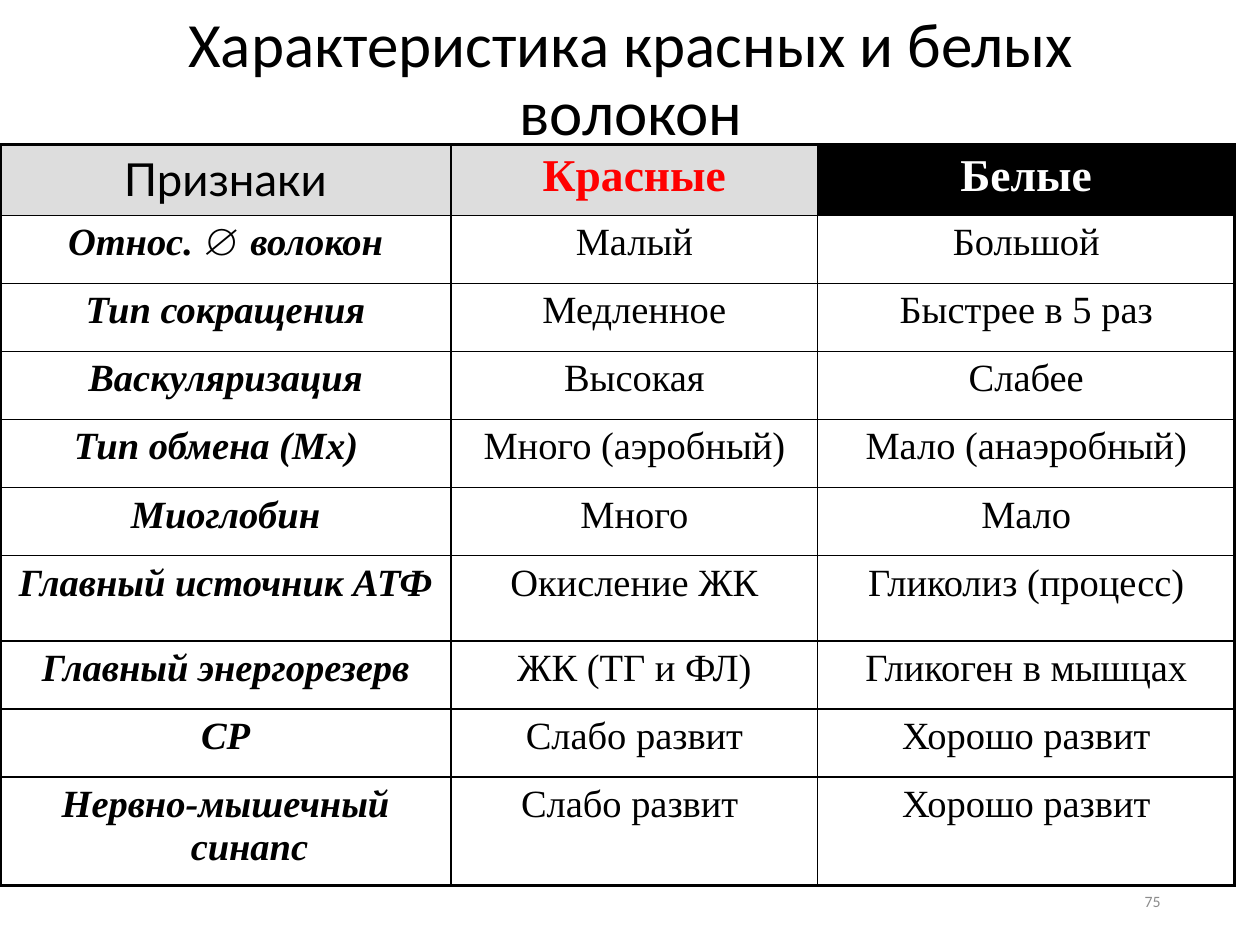
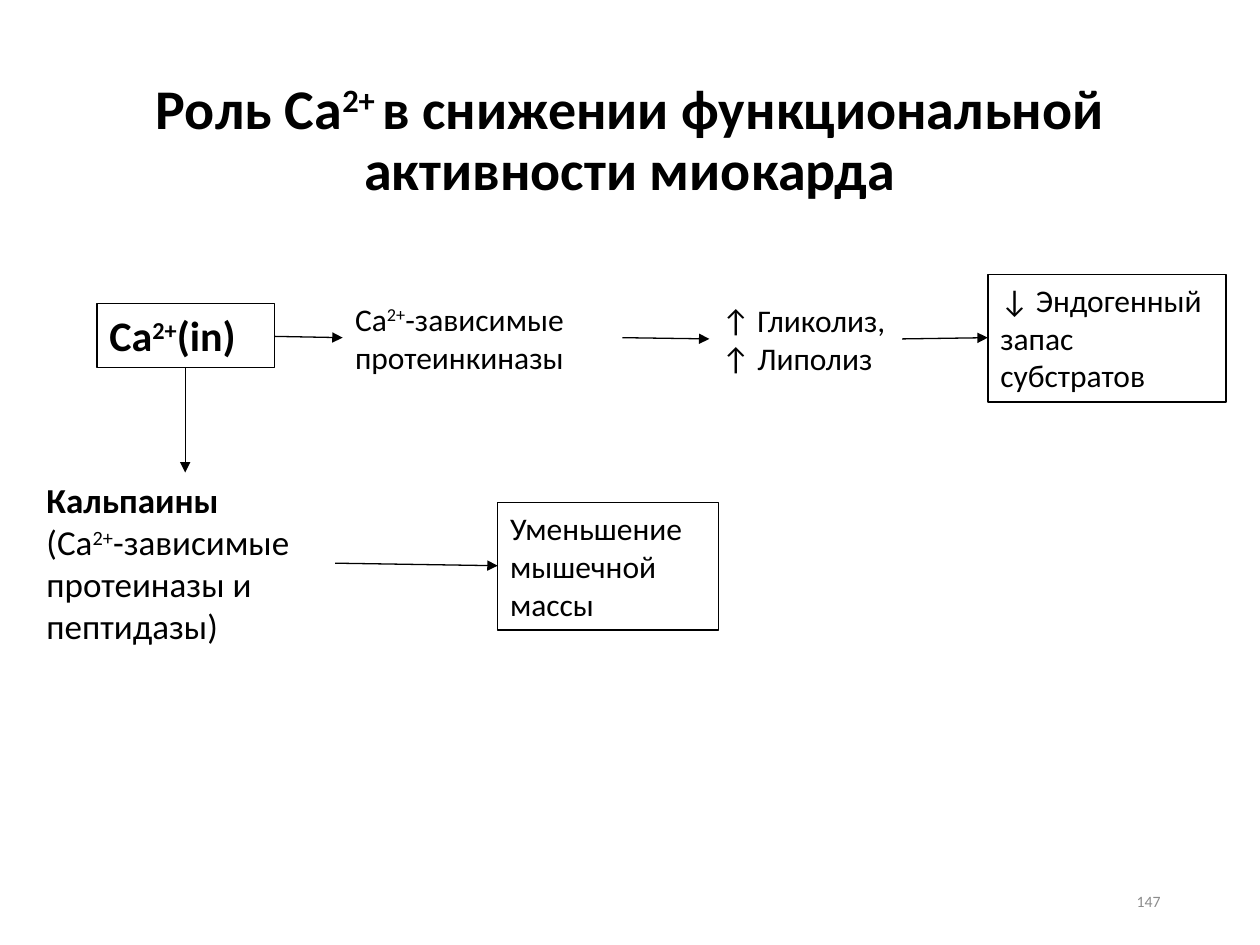
import pptx
import pptx.util
import pptx.dml.color
import pptx.enum.shapes
import pptx.enum.text
import pptx.oxml.ns
from lxml import etree

Inches = pptx.util.Inches
Pt = pptx.util.Pt
RGBColor = pptx.dml.color.RGBColor
ALIGN = pptx.enum.text.PP_ALIGN
ANCHOR = pptx.enum.text.MSO_ANCHOR
qn = pptx.oxml.ns.qn

BLACK = RGBColor(0x00, 0x00, 0x00)
WHITE = RGBColor(0xFF, 0xFF, 0xFF)
RED = RGBColor(0xFF, 0x00, 0x00)
HEADER_GREY = RGBColor(0xDD, 0xDD, 0xDD)
NUMBER_GREY = RGBColor(0x8C, 0x8C, 0x8C)
ION = "2+"  # charge, always set as superscript


def add_run(paragraph, text, size, color=BLACK, font="Calibri", bold=False, italic=False):
    run = paragraph.add_run()
    run.text = text
    run.font.size = Pt(size)
    run.font.name = font
    run.font.color.rgb = color
    run.font.bold = bold
    run.font.italic = italic
    if text.strip() == ION:
        run.font._element.set("baseline", "30000")


def add_text(slide, place, lines, size, color=BLACK, align=ALIGN.LEFT, anchor=ANCHOR.TOP,
             spacing=None, framed=False, wrap=True, grow=False):
    """Each line is a pair: bold or not, and the list of its run texts."""
    place = [Inches(length) for length in place]
    if framed:
        box = slide.shapes.add_shape(pptx.enum.shapes.MSO_SHAPE.RECTANGLE, *place)
        box.shadow.inherit = False
        box.fill.background()
        box.line.color.rgb = BLACK
        box.line.width = Pt(0.75)
    else:
        box = slide.shapes.add_textbox(*place)
    frame = box.text_frame
    frame.word_wrap = wrap
    frame.vertical_anchor = anchor
    frame.auto_size = (pptx.enum.text.MSO_AUTO_SIZE.SHAPE_TO_FIT_TEXT if grow
                       else pptx.enum.text.MSO_AUTO_SIZE.NONE)
    for index, (bold, texts) in enumerate(lines):
        paragraph = frame.add_paragraph() if index else frame.paragraphs[0]
        paragraph.alignment = align
        if spacing:
            paragraph.line_spacing = spacing
        for text in texts:
            add_run(paragraph, text, size, color, bold=bold)


presentation = pptx.Presentation()
presentation.slide_width = Inches(10)
presentation.slide_height = Inches(7.5)

# Titles and slide numbers
headings = [
    ((0.51, 0.21, 9, 0.87), 36, False, ["Характеристика красных и белых волокон"], "75"),
    ((0.69, 0.4, 8.62, 1.45), 32, True,
     ["Роль Ca", ION + " ", "в снижении функциональной активности миокарда"], "147"),
]
slides = []
for place, size, bold, texts, number in headings:
    slide = presentation.slides.add_slide(presentation.slide_layouts[6])
    add_text(slide, place, [(bold, texts)], size,
             align=ALIGN.CENTER, anchor=ANCHOR.MIDDLE, spacing=0.9)
    add_text(slide, (7.06, 6.95, 2.25, 0.4), [(False, [number])], 9, NUMBER_GREY,
             align=ALIGN.RIGHT, anchor=ANCHOR.MIDDLE)
    slides.append(slide)
fibres_slide, calcium_slide = slides

# Slide 1: comparison of fibres
fibre_rows = [
    ("Признаки", "Красные", "Белые"),
    ("Относ. ∅ волокон", "Малый", "Большой"),
    ("Тип сокращения", "Медленное", "Быстрее в 5 раз"),
    ("Васкуляризация", "Высокая", "Слабее"),
    ("Тип обмена (Мх)", "Много (аэробный)", "Мало (анаэробный)"),
    ("Миоглобин", "Много", "Мало"),
    ("Главный источник АТФ", "Окисление ЖК", "Гликолиз (процесс)"),
    ("Главный энергорезерв", "ЖК (ТГ и ФЛ)", "Гликоген в мышцах"),
    ("СР", "Слабо развит", "Хорошо развит"),
    ("Нервно-мышечный синапс", "Слабо развит ", "Хорошо развит"),
]
column_widths = [3.58, 2.91, 3.31]
row_heights = [0.56] + [0.54] * 5 + [0.68] + [0.54] * 2 + [0.86]
header_styles = [  # fill, text colour, font, bold
    (HEADER_GREY, BLACK, "Lato", False),
    (HEADER_GREY, RED, "Times New Roman", True),
    (BLACK, WHITE, "Times New Roman", True),
]
last_row, last_column = len(fibre_rows) - 1, len(column_widths) - 1

fibres = fibres_slide.shapes.add_table(
    len(fibre_rows), len(column_widths), Inches(0), Inches(1.15),
    Inches(sum(column_widths)), Inches(sum(row_heights))).table
fibres.first_row = fibres.horz_banding = False
for column, width in zip(fibres.columns, column_widths):
    column.width = Inches(width)
for row, height in zip(fibres.rows, row_heights):
    row.height = Inches(height)

for r, row_texts in enumerate(fibre_rows):
    for c, text in enumerate(row_texts):
        cell = fibres.cell(r, c)
        # Outer edges are twice as thick as inner ones
        outer_edges = {"lnL": c == 0, "lnR": c == last_column,
                       "lnT": r == 0, "lnB": r == last_row}
        properties = cell._tc.get_or_add_tcPr()
        for edge, outer in outer_edges.items():
            border = etree.SubElement(properties, qn("a:" + edge), w=str(Pt(2 if outer else 1)))
            border_fill = etree.SubElement(border, qn("a:solidFill"))
            etree.SubElement(border_fill, qn("a:srgbClr"), val=str(BLACK))

        paragraph = cell.text_frame.paragraphs[0]
        paragraph.alignment = ALIGN.CENTER
        indents = paragraph._p.get_or_add_pPr()
        indents.set("marL", str(Inches(0.38)))
        indents.set("indent", str(-Inches(0.38)))

        cell.fill.solid()
        if r == 0:
            fill, color, font, bold = header_styles[c]
            cell.fill.fore_color.rgb = fill
            add_run(paragraph, text, 26, color, font, bold)
        else:
            cell.fill.fore_color.rgb = WHITE
            add_run(paragraph, text, 22, font="Times New Roman", bold=c == 0, italic=c == 0)

# The metabolism label sits slightly left of centre
fibres.cell(4, 0).margin_right = Inches(0.25)

# Slide 2: effects of calcium
effects = [  # place, size, framed, wrap, lines
    ((0.77, 2.41, 1.41, 0.51), 24, True, False, [(True, ["Ca", ION, "(in)"])]),
    ((0.27, 3.75, 2.38, 1.43), 20, False, True,
     [(True, ["Кальпаины"]), (False, ["(Ca", ION, "-зависимые протеиназы и пептидазы)"])]),
    ((2.72, 2.33, 2.23, 0.7), 18, False, True,
     [(False, ["Ca", ION, "-зависимые протеинкиназы"])]),
    ((5.63, 2.34, 1.53, 0.7), 18, False, False,
     [(False, ["↑ Гликолиз,"]), (False, ["↑ Липолиз"])]),
    ((3.95, 3.99, 1.75, 1.01), 18, True, True, [(False, ["Уменьшение мышечной массы"])]),
    ((7.84, 2.18, 1.89, 1.01), 18, True, True, [(False, ["↓ Эндогенный запас субстратов"])]),
]
for place, size, framed, wrap, lines in effects:
    add_text(calcium_slide, place, lines, size, framed=framed, wrap=wrap, grow=True)

# Arrows from cause to effect
arrows = [
    (2.18, 2.67, 2.72, 2.68),
    (1.47, 2.92, 1.47, 3.75),
    (4.94, 2.68, 5.63, 2.69),
    (7.16, 2.69, 7.84, 2.68),
    (2.66, 4.47, 3.95, 4.49),
]
for ends in arrows:
    arrow = calcium_slide.shapes.add_connector(
        pptx.enum.shapes.MSO_CONNECTOR.STRAIGHT, *[Inches(end) for end in ends])
    arrow.line.color.rgb = BLACK
    arrow.line.width = Pt(0.75)
    etree.SubElement(arrow.line._get_or_add_ln(), qn("a:tailEnd"), type="triangle")
    etree.SubElement(arrow._element.spPr, qn("a:effectLst"))

presentation.save("out.pptx")
